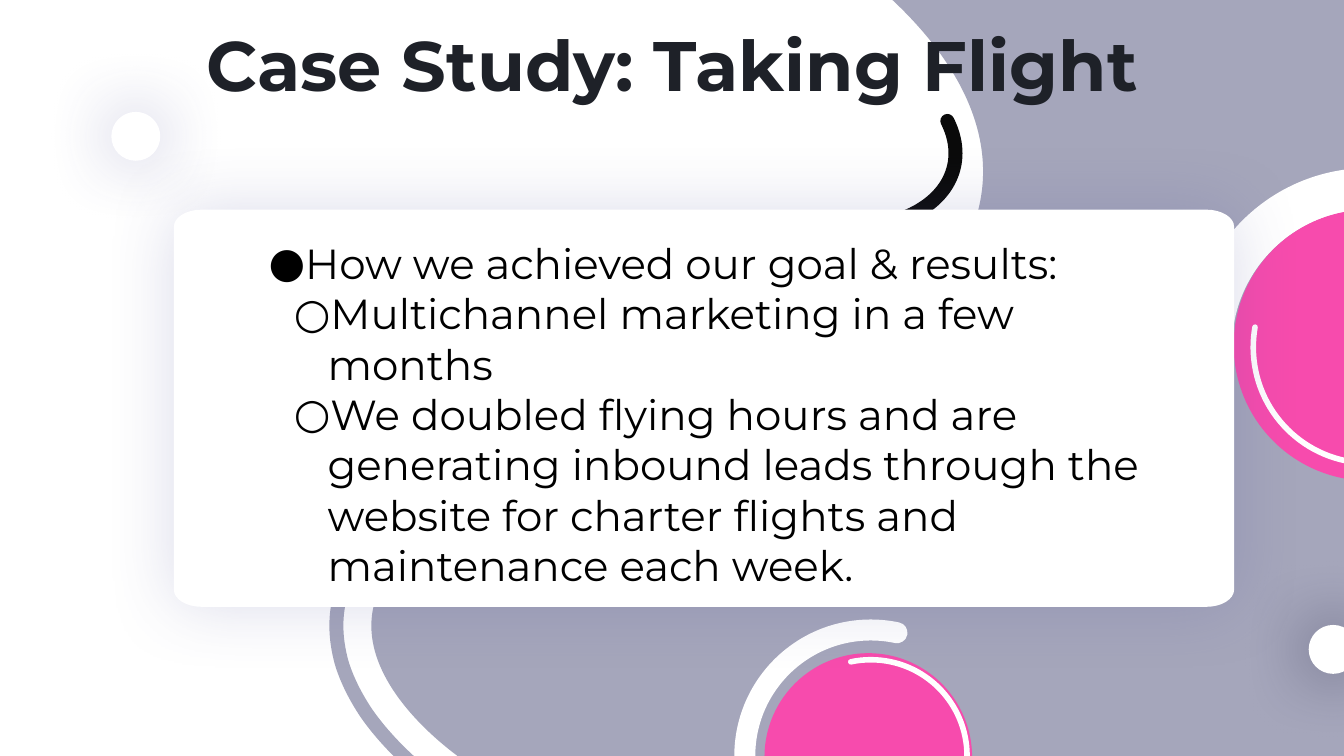
from dataclasses import dataclass
from itertools import pairwise
from math import cos, radians, sin, tan

from lxml import etree
from pptx import Presentation
from pptx.dml.color import RGBColor
from pptx.enum.shapes import MSO_SHAPE
from pptx.enum.text import MSO_ANCHOR, PP_ALIGN
from pptx.oxml.ns import qn
from pptx.util import Inches, Pt

OVAL = MSO_SHAPE.OVAL
TOP = MSO_ANCHOR.TOP
CENTER = PP_ALIGN.CENTER
LEFT = PP_ALIGN.LEFT
COLUMNS, ROWS = 26.67, 15


@dataclass(frozen=True)
class Theme:
    """Colours, font and type sizes of the deck."""

    font: str = "Montserrat"
    title_size: int = 100
    body_size: int = 60
    title: str = "1E2128"
    body: str = "000000"
    white: str = "FFFFFF"
    lavender: str = "A5A6BB"
    pink: str = "F74BAD"
    ink: str = "0A0A0A"
    dark_glow: str = "222342"
    violet_glow: str = "50529A"


@dataclass(frozen=True)
class Box:
    """A region measured in columns and rows of the one-inch grid."""

    left: float
    top: float
    width: float
    height: float

    def emu(self):
        """Return the four lengths for python-pptx."""
        return [Inches(value) for value in (self.left, self.top, self.width, self.height)]

    def point(self, column, row):
        """Return a grid point counted from the corner of the box."""
        return self.left + column, self.top + row

    def inset(self, left, top, right, bottom):
        """Return the box shrunk by the given columns and rows."""
        return Box(self.left + left, self.top + top,
                   self.width - left - right, self.height - top - bottom)


THEME = Theme()


def paint(shape, fill=None, line=None, width=0):
    """Set fill, outline and round line ends, without a shadow."""
    shape.shadow.inherit = False
    if fill:
        shape.fill.solid()
        shape.fill.fore_color.rgb = RGBColor.from_string(fill)
    else:
        shape.fill.background()
    if line:
        shape.line.color.rgb = RGBColor.from_string(line)
        shape.line.width = Pt(width)
        shape.element.spPr.get_or_add_ln().set("cap", "rnd")
    else:
        shape.line.fill.background()


def glow(shape, colour, opacity):
    """Give a shape a soft shadow on all sides."""
    effects = shape.element.spPr.find(qn("a:effectLst"))
    shadow = etree.SubElement(effects, qn("a:outerShdw"), blurRad=str(Pt(100)),
                              dist="0", dir="0", algn="ctr", rotWithShape="0")
    tint = etree.SubElement(shadow, qn("a:srgbClr"), val=colour)
    etree.SubElement(tint, qn("a:alpha"), val=str(opacity * 1000))


def outline(shapes, box, start, segments, closed=False):
    """Draw a freeform whose segments hold one line end or three curve points."""
    points = [start] + [point for segment in segments for point in segment]
    emu = [tuple(Inches(value) for value in box.point(*point)) for point in points]
    builder = shapes.build_freeform(*emu[0], scale=1.0)
    builder.add_line_segments(emu[1:], close=closed)
    shape = builder.convert_to_shape()
    steps = iter(list(shape.element.iter(qn("a:lnTo"))))
    for segment in segments:
        first, *others = [next(steps) for _ in segment]
        if others:
            first.tag = qn("a:cubicBezTo")
        for other in others:
            first.append(other[0])
            other.getparent().remove(other)
    return shape


def arc(centre, radii, stops):
    """Return the start and the curve segments of an elliptical arc."""
    def spot(angle, pull=0):
        x, y = cos(radians(angle)), sin(radians(angle))
        return centre[0] + radii[0] * (x - pull * y), centre[1] + radii[1] * (y + pull * x)

    segments = []
    for start, end in pairwise(stops):
        pull = 4 / 3 * tan(radians(end - start) / 4)
        segments.append((spot(start, pull), spot(end, -pull), spot(end)))
    return spot(stops[0]), segments


def add_backdrop(page, box):
    """Draw the lavender wave and the two brush curves."""
    wave = [((7.53, 13.84), (5.13, 10.99), (11.91, 9.16)),
            ((19.71, 7.05), (21.24, 3.32), (17.71, 0)),
            ((box.width, 0),), ((box.width, box.height),)]
    paint(outline(page.shapes, box, (9.08, 15), wave, closed=True), THEME.lavender)
    edge = [((7.99, 15), (7.59, 14.61), (7.27, 14.15)),
            ((7.05, 13.82), (6.88, 13.48), (6.78, 13.15)),
            ((6.67, 12.75), (6.64, 12.35), (6.72, 11.96)),
            ((6.86, 11.23), (7.34, 10.56), (8.15, 9.99)),
            ((8.56, 9.7), (9.07, 9.43), (9.66, 9.18))]
    hook = [((13.32, 7.34), (13.64, 7.01), (14, 6.69)),
            ((15.05, 5.78), (16.37, 4.99), (18.04, 4.28)),
            ((18.85, 3.92), (19.19, 3.18), (18.8, 2.4))]
    for start, segments, colour in (((8.34, 15.3), edge, THEME.lavender),
                                    ((13.03, 7.67), hook, THEME.ink)):
        paint(outline(page.shapes, box, start, segments), line=colour, width=20)


def add_disc(page, box, colour, centre, radius, stops, width):
    """Draw a disc with a white arc on it."""
    shapes = page.shapes.add_group_shape().shapes
    paint(shapes.add_shape(OVAL, *box.emu()), colour)
    curve = outline(shapes, box, *arc(centre, (radius, radius), stops))
    paint(curve, colour, THEME.white, width)


def add_dot(page, box, colour, opacity):
    """Draw a glowing white dot."""
    radii = box.width / 2, box.height / 2
    dot = outline(page.shapes, box, *arc(radii, radii, range(0, -361, -90)), closed=True)
    paint(dot, THEME.white)
    glow(dot, colour, opacity)


def add_text_frame(page, box):
    """Add a wrapping text box without margins and return its frame."""
    frame = page.shapes.add_textbox(*box.emu()).text_frame
    frame.word_wrap = True
    frame.vertical_anchor = TOP
    frame.margin_left = frame.margin_top = frame.margin_right = frame.margin_bottom = 0
    return frame


def add_span(para, text, size, colour, bold=False):
    """Add one run of text in the deck font."""
    span = para.add_run()
    span.text = text
    span.font.name = THEME.font
    span.font.size = Pt(size)
    span.font.bold = bold
    span.font.color.rgb = RGBColor.from_string(colour)


def add_title(page, box, text):
    """Write the centred slide title."""
    para = add_text_frame(page, box).paragraphs[0]
    para.alignment = CENTER
    para.line_spacing = 0.56
    add_span(para, text, THEME.title_size, THEME.title, bold=True)


def add_panel(page, box, radii):
    """Draw the glowing white panel with elliptical corners."""
    near_x, near_y = radii
    far_x, far_y = box.width - near_x, box.height - near_y
    corners = ((near_x, near_y), (far_x, near_y), (far_x, far_y), (near_x, far_y))
    segments = []
    for turn, centre in enumerate(corners, 2):
        start, curves = arc(centre, radii, (turn * 90, turn * 90 + 90))
        segments += [(start,)] + curves
    panel = outline(page.shapes, box, segments[0][0], segments[1:], closed=True)
    paint(panel, THEME.white)
    glow(panel, THEME.violet_glow, 20)


def add_list(page, box, items):
    """Write the bulleted list."""
    frame = add_text_frame(page, box)
    for index, (level, text) in enumerate(items):
        para = frame.add_paragraph() if index else frame.paragraphs[0]
        para.alignment = LEFT
        para.level = level
        para.line_spacing = 1.0 if level else 1.15
        properties = para._p.get_or_add_pPr()
        properties.set("marL", str(Inches(1 + level / 2)))
        properties.set("indent", str(Inches(-0.67)))
        tint = etree.SubElement(properties, qn("a:buClr"))
        etree.SubElement(tint, qn("a:srgbClr"), val=THEME.body)
        etree.SubElement(properties, qn("a:buFont"), typeface=THEME.font)
        etree.SubElement(properties, qn("a:buChar"), char="●○"[level])
        add_span(para, text, THEME.body_size, THEME.body)


def main():
    """Build and save the deck."""
    deck = Presentation()
    deck.slide_width, deck.slide_height = Inches(COLUMNS), Inches(ROWS)
    page = deck.slides.add_slide(deck.slide_layouts[6])
    add_backdrop(page, Box(0, 0, COLUMNS, ROWS))
    for box, colour, centre, radius, stops, width in (
        (Box(23.53, 3.21, 7.28, 7.28), THEME.lavender, (3.64, 3.68), 3.14, (180, 270), 60),
        (Box(24.48, 4.16, 5.38, 5.38), THEME.pink, (2.69, 2.73), 2.3, (90, 180, 190), 8),
        (Box(14.5, 12.21, 5.46, 5.46), THEME.lavender, (2.78, 2.79), 2.5,
         (168, 180, 270, 282), 30),
        (Box(15.17, 12.96, 4.12, 4.12), THEME.pink, (2.11, 2.04), 1.91,
         (258, 270, 360, 369), 8),
    ):
        add_disc(page, box, colour, centre, radius, stops, width)
    add_dot(page, Box(25.97, 12.4, 0.97, 0.97), THEME.dark_glow, 60)
    add_dot(page, Box(2.21, 2.22, 0.97, 0.97), THEME.violet_glow, 40)
    add_title(page, Box(0, 1.06, COLUMNS, 2.13), "Case Study: Taking Flight")
    card = Box(3.45, 4.16, 21.04, 7.88)
    add_panel(page, card, (0.55, 0.34))
    add_list(page, card.inset(1.55, 0.4, 1.64, 1), (
        (0, "How we achieved our goal & results:"),
        (1, "Multichannel marketing in a few months"),
        (1, "We doubled flying hours and are generating inbound leads through the "
            "website for charter flights and maintenance each week."),
    ))
    deck.save("out.pptx")


if __name__ == "__main__":
    main()
